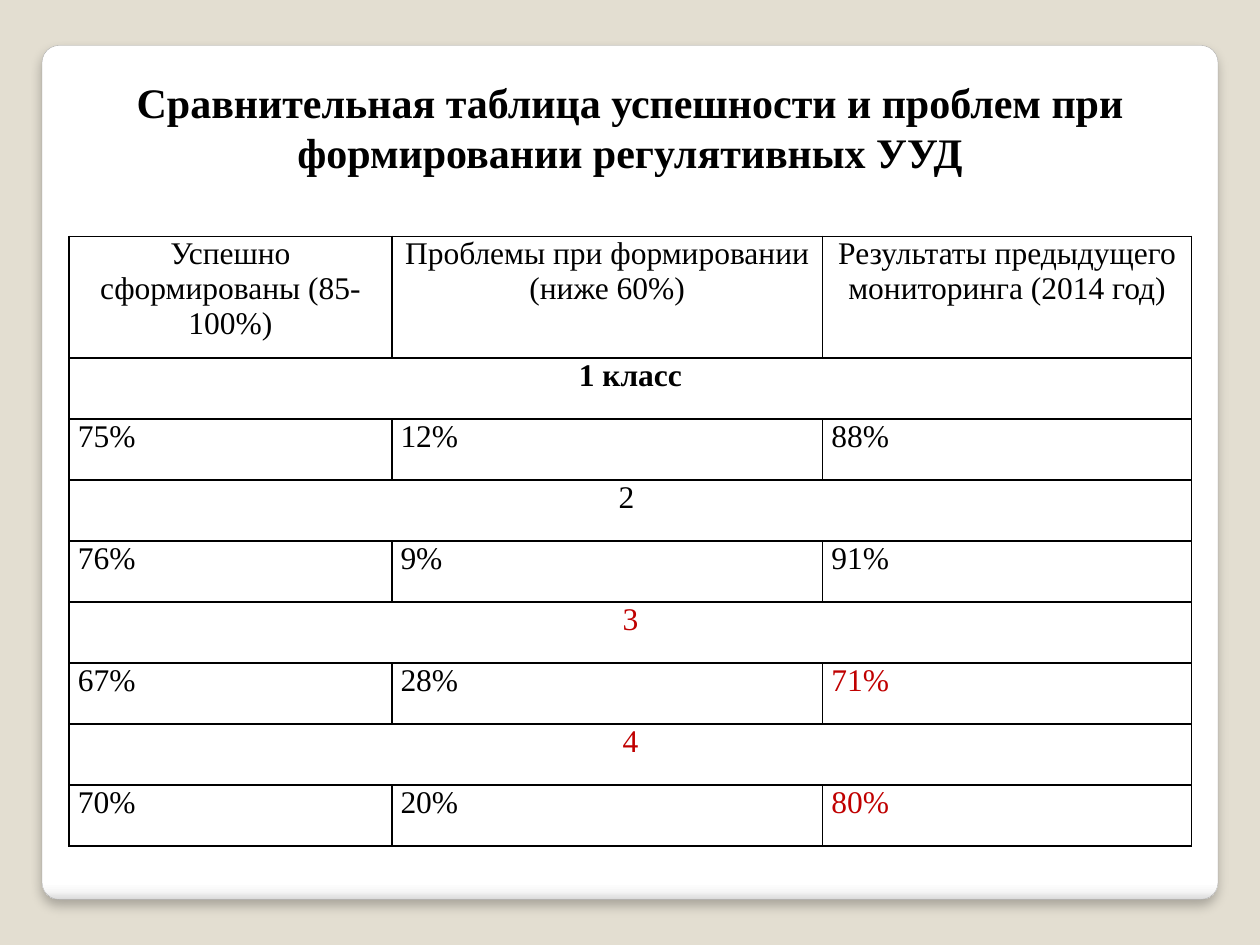
import pptx
import pptx.util
import pptx.dml.color
import pptx.enum.shapes
import pptx.enum.text
import pptx.oxml
import pptx.oxml.ns

Pt = pptx.util.Pt
RGBColor = pptx.dml.color.RGBColor
ALIGN = pptx.enum.text.PP_ALIGN
ANCHOR = pptx.enum.text.MSO_ANCHOR

BEIGE = RGBColor(0xE3, 0xDE, 0xD1)
GREY = RGBColor(0xA4, 0xA4, 0xA4)
BLACK = RGBColor(0, 0, 0)
RED = RGBColor(0xC0, 0, 0)
FONT = "Times New Roman"
NAMESPACE = pptx.oxml.ns.nsdecls("a")


def write(frame, text, align, size, color=BLACK, bold=False):
    para = frame.paragraphs[0]
    para.alignment = align
    span = para.add_run()
    span.text = text
    for name, value in {"name": FONT, "size": Pt(size), "bold": bold}.items():
        setattr(span.font, name, value)
    span.font.color.rgb = color


deck = pptx.Presentation()
deck.slide_width, deck.slide_height = Pt(720), Pt(540)
page = deck.slides.add_slide(deck.slide_layouts[5])
page.background.fill.solid()
page.background.fill.fore_color.rgb = BEIGE

# Rounded white panel, placed behind the title
panel = page.shapes.add_shape(
    pptx.enum.shapes.MSO_SHAPE.ROUNDED_RECTANGLE, Pt(24), Pt(26), Pt(672), Pt(488))
panel.adjustments[0] = 0.02
panel.line.color.rgb = GREY
panel.line.width = Pt(0.16)
panel.fill.gradient()
panel.fill.gradient_angle = 270
stops = panel.element.spPr.find(".//" + pptx.oxml.ns.qn("a:gsLst"))
for stop in list(stops):
    stops.remove(stop)
for percent, color in ((0, "FFFFFF"), (98, "FFFFFF"), (99, "F7F7F7"), (100, "DADADA")):
    stops.append(pptx.oxml.parse_xml(
        f'<a:gs {NAMESPACE} pos="{percent * 1000}"><a:srgbClr val="{color}"/></a:gs>'))
panel.shadow.inherit = False
effects = panel.element.spPr.find(pptx.oxml.ns.qn("a:effectLst"))
effects.append(pptx.oxml.parse_xml(
    f'<a:outerShdw {NAMESPACE} blurRad="{Pt(6)}" dist="{Pt(4)}" dir="5400000" '
    'algn="t" rotWithShape="0"><a:srgbClr val="000000"><a:alpha val="25000"/>'
    '</a:srgbClr></a:outerShdw>'))
page.shapes.element.insert(2, panel.element)

# Title
title = page.shapes.title
place = {"left": 67.5, "top": 39.6, "width": 585, "height": 65.5}
for name, value in place.items():
    setattr(title, name, Pt(value))
title.text_frame.word_wrap = True
title.text_frame.auto_size = pptx.enum.text.MSO_AUTO_SIZE.NONE
title.text_frame.vertical_anchor = ANCHOR.MIDDLE
write(title.text_frame,
      "Сравнительная таблица успешности и проблем при формировании регулятивных УУД",
      ALIGN.CENTER, 24, bold=True)

# Table content: a header, then a class row above each row of results
header = ["Успешно сформированы (85-100%)", "Проблемы при формировании (ниже 60%)",
          "Результаты предыдущего мониторинга (2014 год)"]
classes = [
    ("1 класс", BLACK, ["75%", "12%", "88%"], BLACK),
    ("2 ", BLACK, ["76%", "9%", "91%"], BLACK),
    ("3", RED, ["67%", "28%", "71%"], RED),
    ("4", RED, ["70%", "20%", "80%"], RED),
]
widths = [184.4, 246.2, 210.9]
row_height = 34.85
row_count = 1 + 2 * len(classes)
table = page.shapes.add_table(
    row_count, len(widths), Pt(39.5), Pt(135), Pt(sum(widths)),
    Pt(row_height * (row_count + 1))).table
table.first_row = table.horz_banding = False
for column, width in zip(table.columns, widths):
    column.width = Pt(width)
for number, row in enumerate(table.rows):
    row.height = Pt(row_height * (2 if number == 0 else 1))

# Cell margins, empty fill and thin black borders
cell_format = {"margin_left": Pt(5), "margin_right": Pt(5), "margin_top": 0,
               "margin_bottom": 0, "vertical_anchor": ANCHOR.TOP}
for cell in table.iter_cells():
    for name, value in cell_format.items():
        setattr(cell, name, value)
    properties = cell._tc.get_or_add_tcPr()
    for side in ("lnL", "lnR", "lnT", "lnB"):
        properties.append(pptx.oxml.parse_xml(
            f'<a:{side} {NAMESPACE} w="{Pt(1)}"><a:solidFill><a:srgbClr val="{BLACK}"/>'
            f'</a:solidFill></a:{side}>'))
    cell.fill.background()

# Cell text
for column, text in enumerate(header):
    write(table.cell(0, column).text_frame, text, ALIGN.CENTER, 18)
for index, (name, name_color, results, last_color) in enumerate(classes):
    top = 1 + 2 * index
    table.cell(top, 0).merge(table.cell(top, len(widths) - 1))
    write(table.cell(top, 0).text_frame, name, ALIGN.CENTER, 18, name_color, index == 0)
    for column, (text, color) in enumerate(zip(results, (BLACK, BLACK, last_color))):
        write(table.cell(top + 1, column).text_frame, text, ALIGN.LEFT, 18, color)

deck.save("out.pptx")
